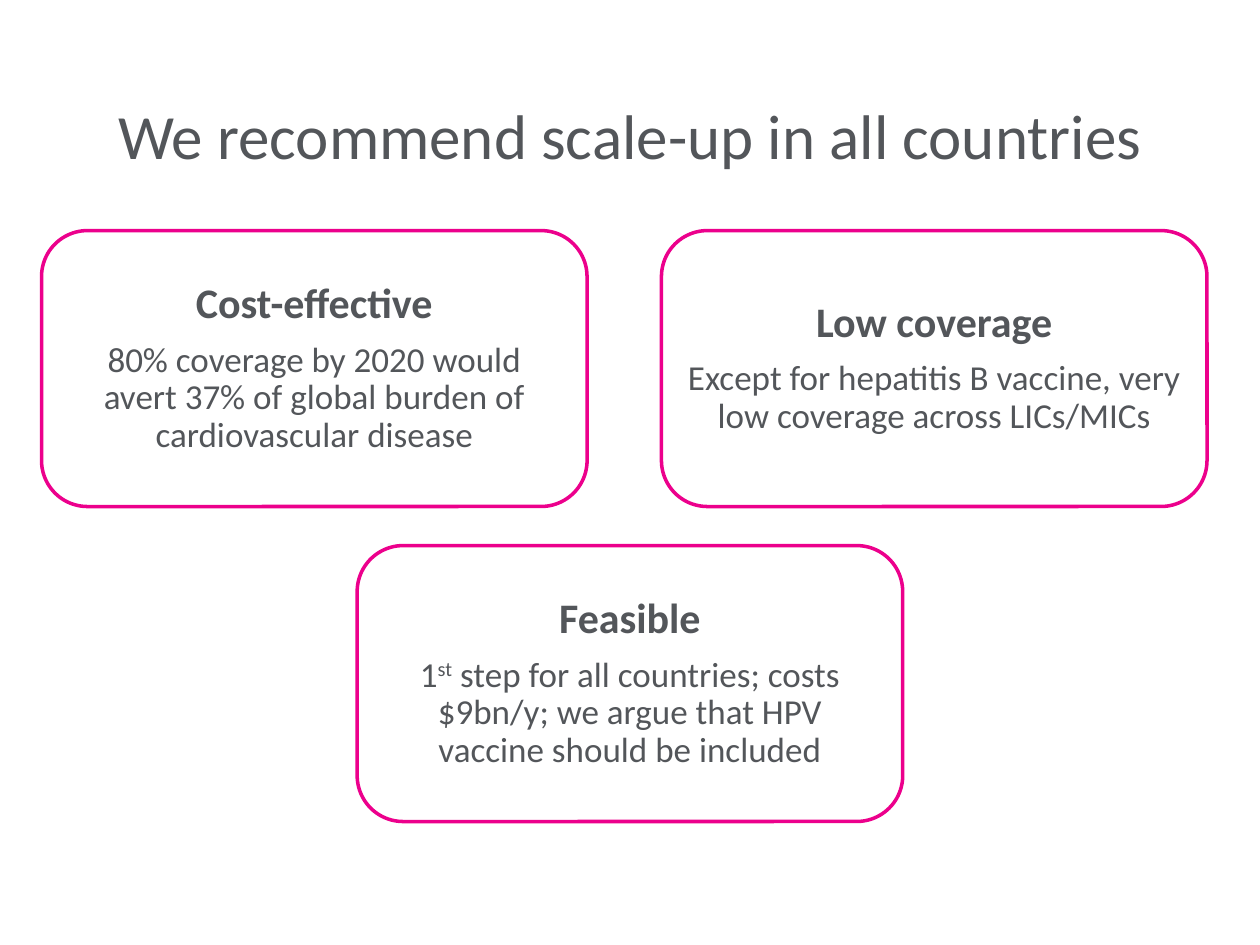
from dataclasses import dataclass

from pptx import Presentation
from pptx.dml.color import RGBColor
from pptx.enum.shapes import MSO_SHAPE
from pptx.enum.text import MSO_ANCHOR, PP_ALIGN
from pptx.util import Inches, Pt

ROUNDED = MSO_SHAPE.ROUNDED_RECTANGLE
MIDDLE = MSO_ANCHOR.MIDDLE
CENTER = PP_ALIGN.CENTER

GREY = RGBColor(0x53, 0x56, 0x5A)
PINK = RGBColor(0xEC, 0x00, 0x8C)
WHITE = RGBColor(0xFF, 0xFF, 0xFF)
FONT = "Calibri"

SLIDE_WIDTH, SLIDE_HEIGHT = 10, 7.5
CARD_WIDTH, CARD_HEIGHT = 4.33, 2.19
LEFT_EDGE, TOP_EDGE = 0.33, 1.83
COLUMN_STEP, ROW_STEP = 4.92, 2.5
CARD_INSET = 0.1


@dataclass(frozen=True)
class Run:
    text: str
    raised: bool = False


@dataclass(frozen=True)
class Card:
    left: float
    row: int
    heading: str
    body: tuple[Run, ...]


CARDS = (
    Card(LEFT_EDGE, 0, "Cost-effective", (
        Run("80% coverage by 2020 would avert 37% of global burden of cardiovascular disease"),
    )),
    Card(LEFT_EDGE + COLUMN_STEP, 0, "Low coverage", (
        Run("Except for hepatitis B vaccine, very low coverage across LICs/MICs"),
    )),
    Card((SLIDE_WIDTH - CARD_WIDTH) / 2, 1, "Feasible", (
        Run("1"),
        Run("st", raised=True),
        Run(" step for all countries; costs $9bn/y; we argue that HPV vaccine should be included"),
    )),
)


def write(paragraph, *runs: Run, size: float, bold: bool = False,
          line_spacing: float = 1.0, space_after: float = 0) -> None:
    paragraph.alignment = CENTER
    paragraph.line_spacing = line_spacing
    paragraph.space_after = Pt(space_after)
    for part in runs:
        run = paragraph.add_run()
        run.text = part.text
        run.font.name = FONT
        run.font.size = Pt(size)
        run.font.bold = bold
        run.font.color.rgb = GREY
        if part.raised:
            run.font._element.set("baseline", "30000")


def add_title(slide, text: str) -> None:
    title = slide.shapes.add_textbox(
        Inches(0.05 * SLIDE_WIDTH), Inches(0.04 * SLIDE_HEIGHT),
        Inches(0.9 * SLIDE_WIDTH), Inches(TOP_EDGE - 0.04 * SLIDE_HEIGHT))
    frame = title.text_frame
    frame.word_wrap = True
    frame.vertical_anchor = MIDDLE
    write(frame.paragraphs[0], Run(text), size=36)


def add_card(slide, card: Card) -> None:
    box = slide.shapes.add_shape(
        ROUNDED, Inches(card.left), Inches(TOP_EDGE + card.row * ROW_STEP),
        Inches(CARD_WIDTH), Inches(CARD_HEIGHT))
    box.shadow.inherit = False
    box.fill.solid()
    box.fill.fore_color.rgb = WHITE
    box.line.color.rgb = PINK
    box.line.width = Pt(2)
    frame = box.text_frame
    frame.word_wrap = True
    frame.vertical_anchor = MIDDLE
    frame.margin_left = frame.margin_right = Inches(CARD_INSET)
    frame.margin_top = frame.margin_bottom = Inches(CARD_INSET)
    write(frame.paragraphs[0], Run(card.heading), size=24, bold=True,
          line_spacing=0.9, space_after=8.4)
    write(frame.add_paragraph(), *card.body, size=20, line_spacing=0.9)


def main() -> None:
    deck = Presentation()
    deck.slide_width = Inches(SLIDE_WIDTH)
    deck.slide_height = Inches(SLIDE_HEIGHT)
    slide = deck.slides.add_slide(deck.slide_layouts[6])
    add_title(slide, "We recommend scale-up in all countries")
    for card in CARDS:
        add_card(slide, card)
    deck.save("out.pptx")


if __name__ == "__main__":
    main()
